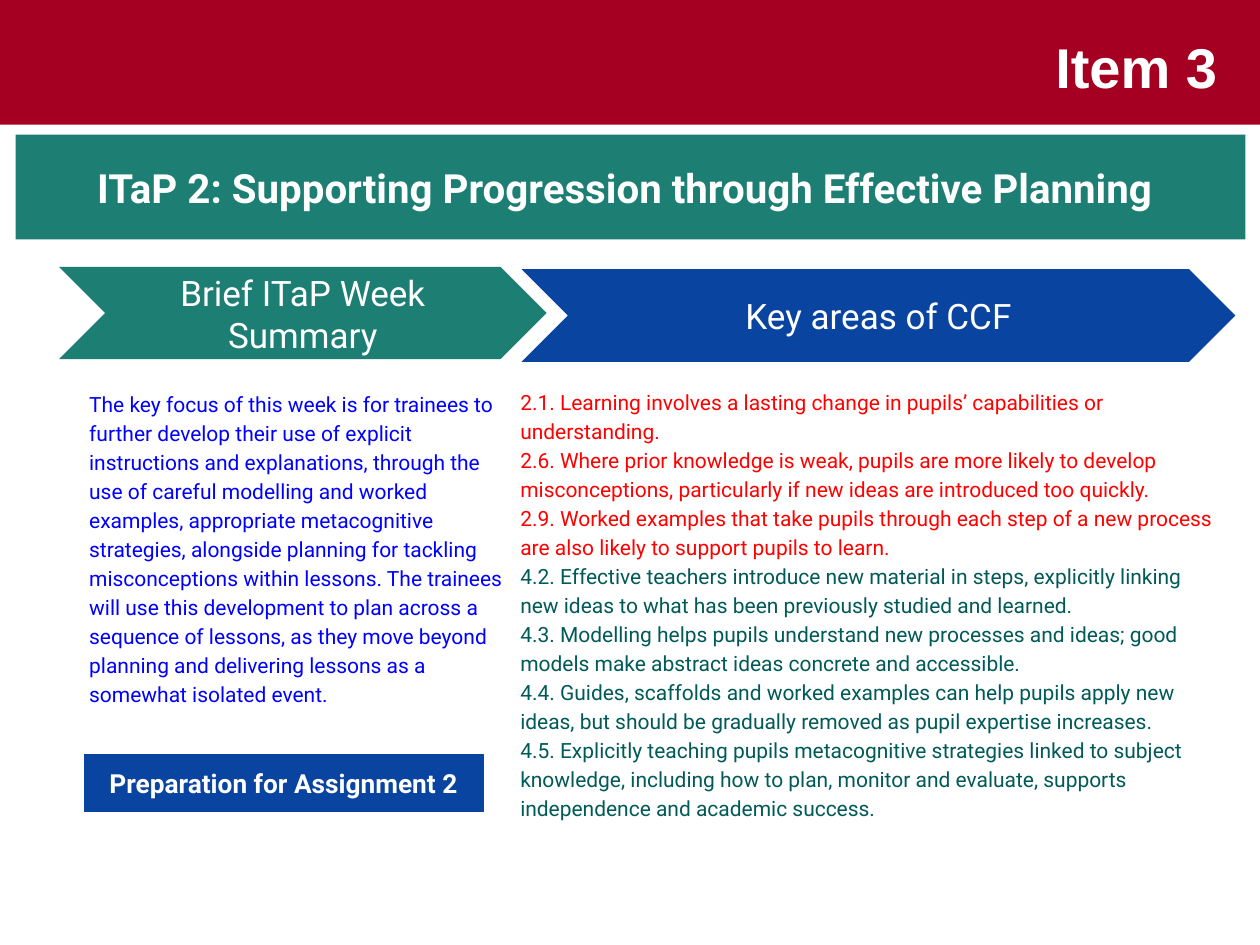
"""Builds the Item 3 slide on supporting progression through planning."""
import pptx
import pptx.dml.color
import pptx.enum.shapes
import pptx.enum.text
import pptx.util

Pt = pptx.util.Pt
Shape = pptx.enum.shapes.MSO_SHAPE
Align = pptx.enum.text.PP_ALIGN
Anchor = pptx.enum.text.MSO_ANCHOR
Fit = pptx.enum.text.MSO_AUTO_SIZE

RED, GREEN, BLUE, WHITE = "A50021", "1D7E74", "0944A1", "FFFFFF"
FOCUS, LEARN, TEACH = "0000FF", "FF0000", "005A58"

SUMMARY = (
    "The key focus of this week is for trainees to further develop their use of "
    "explicit instructions and explanations, through the use of careful modelling "
    "and worked examples, appropriate metacognitive strategies, alongside planning "
    "for tackling misconceptions within lessons. The trainees will use this "
    "development to plan across a sequence of lessons, as they move beyond planning "
    "and delivering lessons as a somewhat isolated event."
)
AREAS = [
    ("2.1. Learning involves a lasting change in pupils’ capabilities or "
     "understanding.", LEARN),
    ("2.6. Where prior knowledge is weak, pupils are more likely to develop "
     "misconceptions, particularly if new ideas are introduced too quickly.", LEARN),
    ("2.9. Worked examples that take pupils through each step of a new process "
     "are also likely to support pupils to learn.", LEARN),
    ("4.2. Effective teachers introduce new material in steps, explicitly linking "
     "new ideas to what has been previously studied and learned.", TEACH),
    ("4.3. Modelling helps pupils understand new processes and ideas; good models "
     "make abstract ideas concrete and accessible.", TEACH),
    ("4.4. Guides, scaffolds and worked examples can help pupils apply new ideas, "
     "but should be gradually removed as pupil expertise increases.", TEACH),
    ("4.5. Explicitly teaching pupils metacognitive strategies linked to subject "
     "knowledge, including how to plan, monitor and evaluate, supports "
     "independence and academic success.", TEACH),
]


def paint(color, tone):
    """Set a colour format to a hex tone."""
    color.rgb = pptx.dml.color.RGBColor.from_string(tone)


def apply(target, values):
    """Set each named attribute of the target."""
    for name, value in values.items():
        setattr(target, name, value)


class Deck:
    """Hold the text style and the current slide."""

    frame = {"word_wrap": True, "auto_size": Fit.NONE,
             "margin_left": Pt(7.2), "margin_right": Pt(7.2),
             "margin_top": Pt(7.2), "margin_bottom": Pt(7.2)}

    def __init__(self, wide, high):
        """Start a file with one title-only slide."""
        self.file = pptx.Presentation()
        apply(self.file, {"slide_width": Pt(wide), "slide_height": Pt(high)})
        self.slide = self.file.slides.add_slide(self.file.slide_layouts[5])

    def label(self, shape, lines, size, align, anchor, space=1.0, bold=False,
              face="Roboto", **frame):
        """Fill a shape with styled (text, tone) lines."""
        box = shape.text_frame
        apply(box, {**self.frame, "vertical_anchor": anchor, **frame})
        for spot, (text, tone) in enumerate(lines):
            para = box.add_paragraph() if spot else box.paragraphs[0]
            apply(para, {"alignment": align, "line_spacing": space})
            run = para.add_run()
            run.text = text
            apply(run.font, {"name": face, "size": Pt(size), "bold": bold})
            paint(run.font.color, tone)

    def block(self, kind, area, tone, text="", size=20, bold=False,
              anchor=Anchor.MIDDLE, edge=False):
        """Add a filled shape, with a centred label if there is text."""
        shape = self.slide.shapes.add_shape(kind, *map(Pt, area))
        shape.shadow.inherit = False
        shape.fill.solid()
        paint(shape.fill.fore_color, tone)
        if edge:
            shape.line.width = Pt(0.75)
            paint(shape.line.color, tone)
        else:
            shape.line.fill.background()
        if text:
            self.label(shape, [(text, WHITE)], size, Align.CENTER, anchor, bold=bold)

    def body(self, area, lines):
        """Add a text box of body lines."""
        shape = self.slide.shapes.add_textbox(*map(Pt, area))
        self.label(shape, lines, 12, Align.LEFT, Anchor.TOP, space=1.15)

    def title(self, area, text):
        """Place the title in front of the shapes drawn so far."""
        shape = self.slide.shapes.title
        apply(shape, dict(zip(("left", "top", "width", "height"), map(Pt, area))))
        shape.element.getparent().append(shape.element)
        self.label(shape, [(text, WHITE)], 32, Align.RIGHT, Anchor.MIDDLE, bold=True,
                   face="Arial", margin_top=Pt(3.6), margin_bottom=Pt(3.6))


def main():
    """Build and save the slide."""
    deck = Deck(720, 540)
    deck.block(Shape.RECTANGLE, (0, 0, 720, 71.3), RED)
    deck.block(Shape.CHEVRON, (33.8, 152.6, 278.6, 52.6), GREEN,
               "Brief ITaP Week Summary")
    deck.body((43.9, 214.6, 254.2, 206), [(SUMMARY, FOCUS)])
    deck.block(Shape.CHEVRON, (298, 153.8, 408, 53), BLUE, "Key areas of CCF")
    deck.body((290.2, 213.4, 416.2, 206), AREAS)
    deck.block(Shape.RECTANGLE, (9, 77, 702.7, 59.8), GREEN,
               "ITaP 2: Supporting Progression through Effective Planning ",
               size=23, bold=True)
    deck.block(Shape.RECTANGLE, (48.2, 431.2, 227.8, 32.4), BLUE,
               "Preparation for Assignment 2", size=15, bold=True,
               anchor=Anchor.TOP, edge=True)
    deck.title((218.2, 9.4, 484.6, 56.9), "Item 3")
    deck.file.save("out.pptx")


if __name__ == "__main__":
    main()
